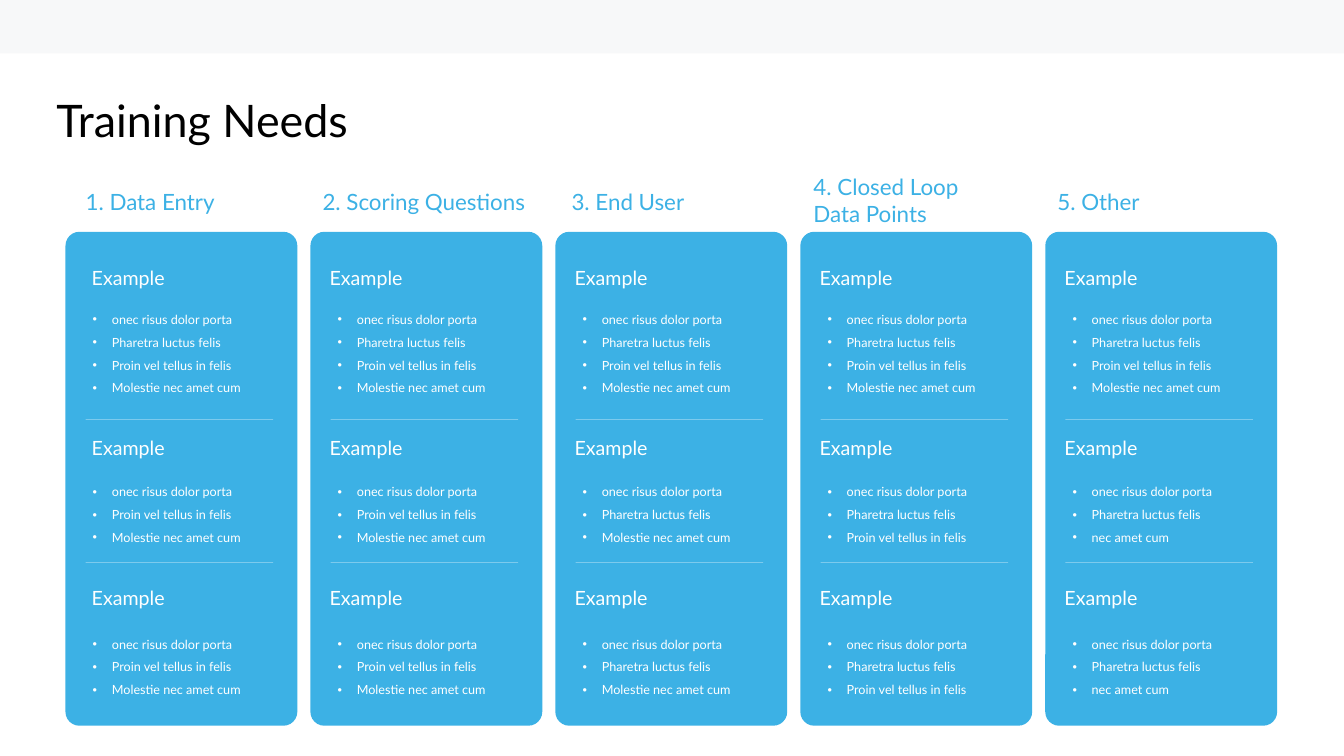
from dataclasses import dataclass

from lxml import etree
from pptx import Presentation, util as u
from pptx.dml.color import RGBColor
from pptx.enum import shapes, text
from pptx.oxml.ns import qn


@dataclass(frozen=True)
class Theme:
    font: str = "Lato"
    blue: str = "3CB1E5"
    white: str = "FFFFFF"
    black: str = "000000"
    band: str = "F7F8F9"
    title: int = 32
    heading: int = 16
    example: int = 14
    item: int = 9
    rule: float = 0.25


class Board:
    """Draws on one slide with a grid of 0.1-inch columns and rows."""

    columns, rows = 133.33, 75
    cell = u.Inches(0.1)

    def __init__(self, deck, theme):
        self.theme = theme
        deck.slide_width, deck.slide_height = self.grid(self.columns, self.rows)
        self.page = deck.slides.add_slide(deck.slide_layouts[5])

    def grid(self, *cells):
        return [u.Emu(round(count * self.cell)) for count in cells]

    def fill_text(self, box, lines, size, color, wrap=True, spacing=None, bullets=False):
        frame = box.text_frame
        frame.margin_left = frame.margin_top = frame.margin_right = frame.margin_bottom = 0
        frame.auto_size = text.MSO_AUTO_SIZE.NONE
        frame.vertical_anchor = text.MSO_ANCHOR.TOP
        frame.word_wrap = wrap
        frame.text = "\n".join(lines)
        for para in frame.paragraphs:
            if bullets:
                self.bullet(para, color)
            para.alignment = text.PP_ALIGN.LEFT
            para.line_spacing = spacing
            for span in para.runs:
                span.font.name = self.theme.font
                span.font.size = u.Pt(size)
                span.font.color.rgb = RGBColor.from_string(color)

    def bullet(self, para, color):
        props = para._p.get_or_add_pPr()
        indent, = self.grid(1.9)
        props.set("marL", str(indent))
        props.set("indent", str(-indent))
        tint = etree.SubElement(props, qn("a:buClr"))
        etree.SubElement(tint, qn("a:srgbClr"), val=color)
        etree.SubElement(props, qn("a:buFont"), typeface="Arial")
        etree.SubElement(props, qn("a:buChar"), char="•")

    def title(self, words, *place):
        box = self.page.shapes.title
        box.left, box.top, box.width, box.height = self.grid(*place)
        self.fill_text(box, [words], self.theme.title, self.theme.black, spacing=0.9)

    def label(self, words, size, color, *place):
        box = self.page.shapes.add_textbox(*self.grid(*place))
        self.fill_text(box, [words], size, color)

    def items(self, lines, *place):
        box = self.page.shapes.add_textbox(*self.grid(*place))
        self.fill_text(box, lines, self.theme.item, self.theme.white,
                       wrap=False, spacing=1.5, bullets=True)

    def panel(self, kind, color, *place):
        box = self.page.shapes.add_shape(kind, *self.grid(*place))
        box.shadow.inherit = False
        box.fill.solid()
        box.fill.fore_color.rgb = RGBColor.from_string(color)
        box.line.fill.background()
        return box

    def rule(self, left, row, width):
        line = self.page.shapes.add_connector(
            shapes.MSO_CONNECTOR.STRAIGHT, *self.grid(left, row, left + width, row))
        line.line.width = u.Pt(self.theme.rule)
        line.line.color.rgb = RGBColor.from_string(self.theme.white)
        tint = line._element.spPr.find(".//" + qn("a:srgbClr"))
        etree.SubElement(tint, qn("a:alpha"), val="95000")
        etree.SubElement(line._element.spPr, qn("a:effectLst"))


ONEC, PHARETRA, PROIN, MOLESTIE, NEC = (
    "onec risus dolor porta", "Pharetra luctus felis", "Proin vel tellus in felis",
    "Molestie nec amet cum", "nec amet cum")
FULL_LIST = [ONEC, PHARETRA, PROIN, MOLESTIE]

NEEDS = [
    ("1. Data Entry", (8.5, 18.7, 15.3, 4.2), 2.6, [ONEC, PROIN, MOLESTIE]),
    ("2. Scoring Questions", (32, 18.7, 22, 3.1), 1.9, [ONEC, PROIN, MOLESTIE]),
    ("3. End User", (56.7, 18.7, 19.7, 3), 1.9, [ONEC, PHARETRA, MOLESTIE]),
    ("4. Closed Loop Data Points", (80.7, 17.2, 19.5, 5.2), 1.9, [ONEC, PHARETRA, PROIN]),
    ("5. Other", (104.9, 18.7, 13.4, 4.2), 1.9, [ONEC, PHARETRA, NEC]),
]
FIRST_CARD, CARD_STEP = 6.5, 24.3
SECTION_ROWS = [(26.4, 30.2), (43.2, 47.3), (58.1, 62.4)]
RULE_ROWS = [41.6, 55.8]


def main():
    theme = Theme()
    deck = Presentation()
    board = Board(deck, theme)
    board.panel(shapes.MSO_SHAPE.RECTANGLE, theme.band, 0, 0, board.columns, 5.3)
    board.title("Training Needs", 5.6, 9.8, 45.4, 5)
    for index, (heading, place, inset, short_list) in enumerate(NEEDS):
        left = FIRST_CARD + index * CARD_STEP
        card = board.panel(shapes.MSO_SHAPE.ROUNDED_RECTANGLE, theme.blue, left, 23, 23, 49)
        card.adjustments[0] = 0.06
        board.label(heading, theme.heading, theme.blue, *place)
        for (example_row, list_row), lines in zip(
                SECTION_ROWS, [FULL_LIST, short_list, short_list]):
            board.label("Example", theme.example, theme.white,
                        left + inset, example_row, 18.9, 3.2)
            board.items(lines, left + 2.7, list_row, 16.9, 8.1)
        for row in RULE_ROWS:
            board.rule(left + 2, row, 18.6)
    deck.save("out.pptx")


if __name__ == "__main__":
    main()
